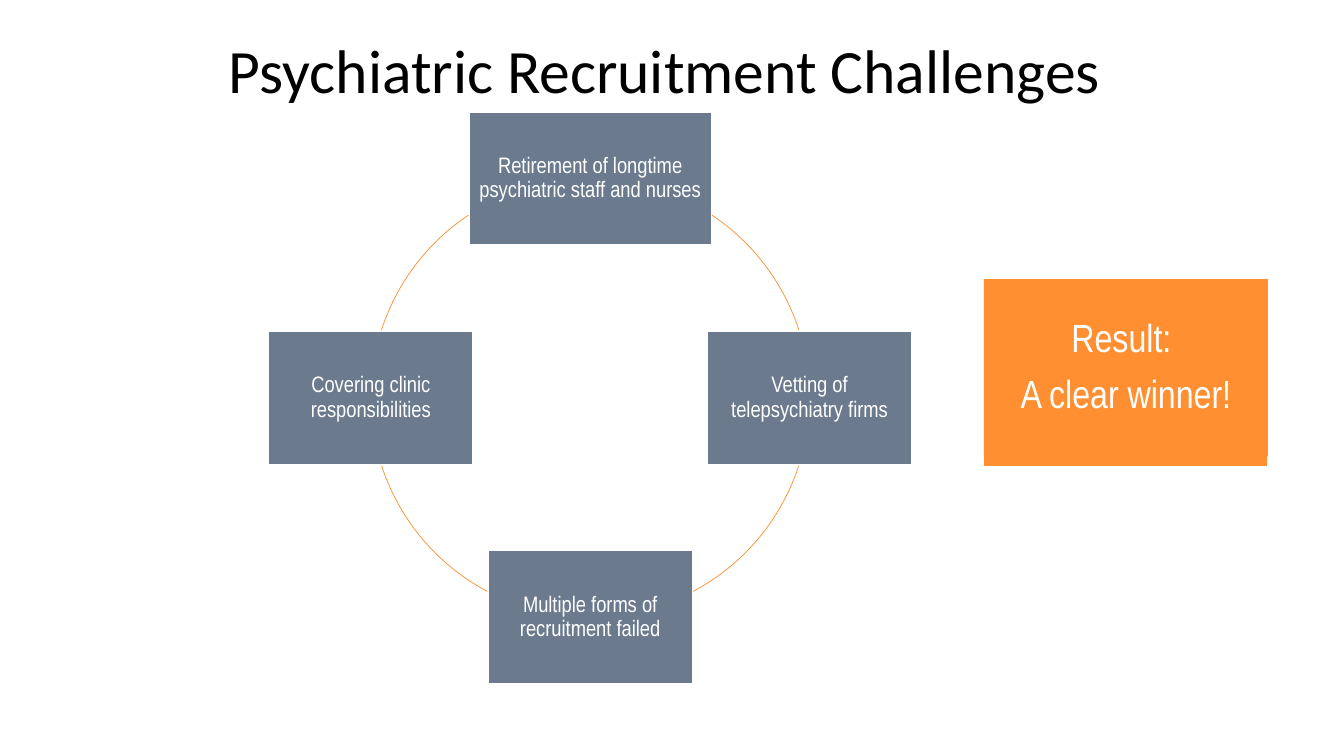
from math import cos, radians, sin

from pptx import Presentation
from pptx.dml.color import RGBColor
from pptx.enum.shapes import MSO_SHAPE
from pptx.enum.text import MSO_ANCHOR, MSO_AUTO_SIZE, PP_ALIGN
from pptx.util import Pt

WHITE = RGBColor(0xFF, 0xFF, 0xFF)
BLACK = RGBColor(0x00, 0x00, 0x00)
SLATE = RGBColor(0x6B, 0x7A, 0x8D)
ORANGE = RGBColor(0xFF, 0x8F, 0x31)

BOX_HEIGHT = 95
# Compass angle (clockwise from east), box width, wording
CHALLENGES = [
    (270, 173, "Retirement of longtime psychiatric staff and nurses"),
    (0, 146, "Vetting of telepsychiatry firms"),
    (90, 146, "Multiple forms of recruitment failed"),
    (180, 146, "Covering clinic responsibilities"),
]
# Start and end angles of the arcs between the boxes
ARCS = [(303.7, 342.1), (18.1, 62), (118, 161.9), (197.9, 236.3)]


def write_text(shape, lines, font_name, size, color, space_after=0):
    """Write centred lines, one paragraph each."""
    frame = shape.text_frame
    frame.word_wrap = True
    frame.auto_size = MSO_AUTO_SIZE.NONE
    frame.vertical_anchor = MSO_ANCHOR.MIDDLE
    for index, line in enumerate(lines):
        paragraph = frame.add_paragraph() if index else frame.paragraphs[0]
        paragraph.alignment = PP_ALIGN.CENTER
        paragraph.line_spacing = 0.9
        paragraph.space_before = Pt(0)
        paragraph.space_after = Pt(space_after)
        run = paragraph.add_run()
        run.text = line
        run.font.name = font_name
        run.font.size = Pt(size)
        run.font.color.rgb = color


def add_box(slide, left, top, width, height, fill, outline=None):
    """Add a flat rectangle with small text margins."""
    box = slide.shapes.add_shape(
        MSO_SHAPE.RECTANGLE, Pt(left), Pt(top), Pt(width), Pt(height))
    box.shadow.inherit = False
    box.fill.solid()
    box.fill.fore_color.rgb = fill
    if outline is None:
        box.line.fill.background()
    else:
        box.line.color.rgb = outline
        box.line.width = Pt(1)
    frame = box.text_frame
    frame.margin_left = frame.margin_right = Pt(5)
    frame.margin_top = frame.margin_bottom = Pt(5)
    return box


def add_title(slide, left, top, width, height):
    title = slide.shapes.title
    title.left, title.top = Pt(left), Pt(top)
    title.width, title.height = Pt(width), Pt(height)
    write_text(title, ["Psychiatric Recruitment Challenges "], "Calibri", 44, BLACK)


def add_cycle(slide, left, top, diameter):
    """Place the challenges at the compass points of a circle."""
    radius = diameter / 2

    # Boxes
    for angle, width, wording in CHALLENGES:
        center_x = left + radius + radius * cos(radians(angle))
        center_y = top + radius + radius * sin(radians(angle))
        box = add_box(slide, center_x - width / 2, center_y - BOX_HEIGHT / 2,
                      width, BOX_HEIGHT, SLATE, WHITE)
        write_text(box, [wording], "Arial Narrow", 16, WHITE)

    # Connecting arcs; an adjustment of 0.6 is one degree
    for start, end in ARCS:
        arc = slide.shapes.add_shape(
            MSO_SHAPE.ARC, Pt(left), Pt(top), Pt(diameter), Pt(diameter))
        arc.shadow.inherit = False
        arc.adjustments[0] = start * 0.6
        arc.adjustments[1] = end * 0.6
        arc.fill.background()
        arc.line.color.rgb = ORANGE
        arc.line.width = Pt(0.5)


def add_result(slide, left, top, width, height):
    """Add the result panel over a slightly lower backing panel."""
    add_box(slide, left, top + 7.2, width, height, ORANGE, WHITE)
    panel = add_box(slide, left, top, width, height, ORANGE)
    write_text(panel, ["Result: ", "A clear winner!"], "Arial Narrow", 28, WHITE, 10)


def main():
    presentation = Presentation()
    presentation.slide_width, presentation.slide_height = Pt(960), Pt(540)
    slide = presentation.slides.add_slide(presentation.slide_layouts[5])
    add_title(slide, 66, 0, 828, 104.4)
    add_cycle(slide, 264.9, 127.4, 313.4)
    add_result(slide, 702.7, 199.4, 203, 126.7)
    presentation.save("out.pptx")


if __name__ == "__main__":
    main()
